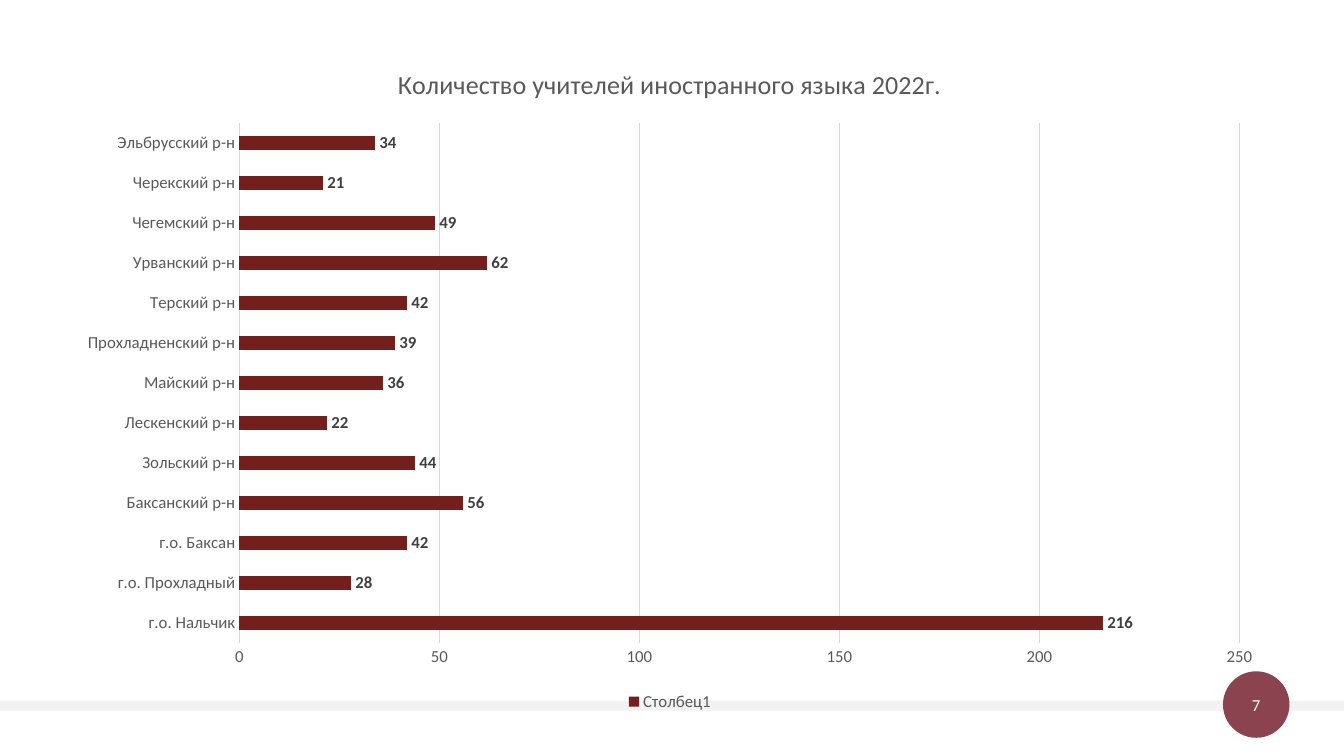
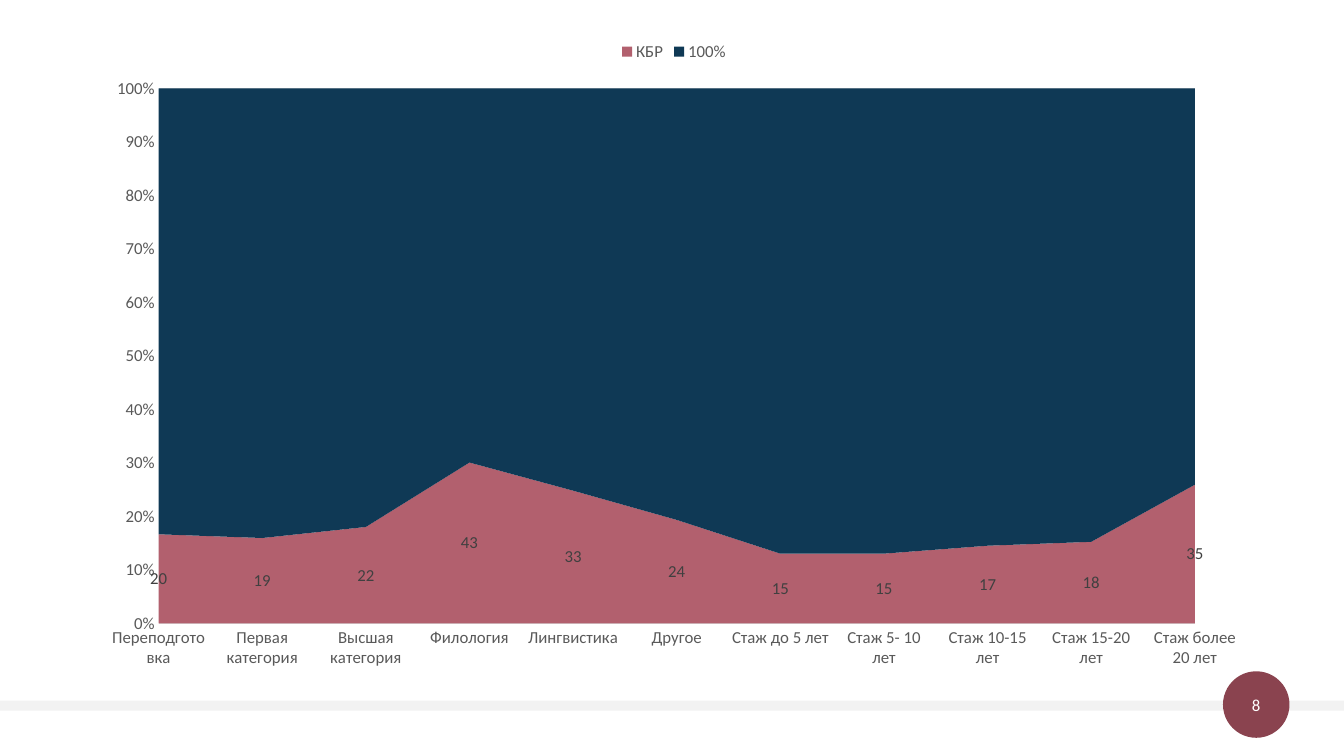
from lxml.etree import SubElement
from pptx import Presentation
from pptx.chart.data import CategoryChartData
from pptx.dml.color import RGBColor
from pptx.enum.chart import (XL_CHART_TYPE, XL_LABEL_POSITION,
                             XL_LEGEND_POSITION, XL_TICK_MARK)
from pptx.enum.shapes import MSO_SHAPE
from pptx.enum.text import MSO_ANCHOR, PP_ALIGN
from pptx.oxml.ns import qn
from pptx.util import Inches, Pt

FONT = "Calibri"
WHITE = RGBColor(0xFF, 0xFF, 0xFF)
BAND_GREY = RGBColor(0xF2, 0xF2, 0xF2)
BADGE_ROSE = RGBColor(0x8A, 0x43, 0x4F)
GRID_GREY = RGBColor(0xD9, 0xD9, 0xD9)
TEXT_GREY = RGBColor(0x59, 0x59, 0x59)
LABEL_GREY = RGBColor(0x40, 0x40, 0x40)
BAR_RED = RGBColor(0x73, 0x1F, 0x1C)
AREA_ROSE = RGBColor(0xB2, 0x60, 0x6E)
AREA_NAVY = RGBColor(0x0F, 0x39, 0x55)

SLIDE_WIDTH, SLIDE_HEIGHT = 13.33, 7.5
BADGE_SIZE = 0.66

TEACHERS = {
    "г.о. Нальчик": 216,
    "г.о. Прохладный": 28,
    "г.о. Баксан": 42,
    "Баксанский р-н": 56,
    "Зольский р-н": 44,
    "Лескенский р-н": 22,
    "Майский р-н": 36,
    "Прохладненский р-н": 39,
    "Терский р-н": 42,
    "Урванский р-н": 62,
    "Чегемский р-н": 49,
    "Черекский р-н": 21,
    "Эльбрусский р-н": 34,
}
QUALIFICATIONS = {
    "Переподготовка": 20,
    "Первая категория": 19,
    "Высшая категория": 22,
    "Филология": 43,
    "Лингвистика": 33,
    "Другое": 24,
    "Стаж до 5 лет": 15,
    "Стаж 5- 10 лет": 15,
    "Стаж 10-15 лет": 17,
    "Стаж 15-20 лет": 18,
    "Стаж более 20 лет": 35,
}


def style_font(font, color, size=12, bold=False):
    font.name = FONT
    font.size = Pt(size)
    font.bold = bold
    font.color.rgb = color


def add_plain_shape(slide, preset, box, color):
    shape = slide.shapes.add_shape(preset, *map(Inches, box))
    shape.shadow.inherit = False
    shape.fill.solid()
    shape.fill.fore_color.rgb = color
    shape.line.fill.background()
    return shape


def add_footer(slide, number):
    """Grey band across the slide with the page number in a round badge."""
    add_plain_shape(slide, MSO_SHAPE.RECTANGLE, (0, 6.95, SLIDE_WIDTH, 0.1), BAND_GREY)
    badge = add_plain_shape(slide, MSO_SHAPE.OVAL,
                            (12.13, 6.66, BADGE_SIZE, BADGE_SIZE), BADGE_ROSE)
    frame = badge.text_frame
    frame.margin_left = frame.margin_right = frame.margin_top = frame.margin_bottom = 0
    frame.vertical_anchor = MSO_ANCHOR.MIDDLE
    frame.text = str(number)
    paragraph = frame.paragraphs[0]
    paragraph.alignment = PP_ALIGN.CENTER
    style_font(paragraph.runs[0].font, WHITE)


def style_axes(chart):
    categories, values = chart.category_axis, chart.value_axis
    for axis in (categories, values):
        axis.major_tick_mark = axis.minor_tick_mark = XL_TICK_MARK.NONE
        style_font(axis.tick_labels.font, TEXT_GREY)
    categories.has_major_gridlines = False
    values.has_major_gridlines = True
    values.format.line.fill.background()
    for line in (categories.format.line, values.major_gridlines.format.line):
        line.color.rgb = GRID_GREY
        line.width = Pt(0.75)


def add_styled_chart(slide, kind, box, categories, series, legend_position):
    """series holds (name, values, colour) for each data row."""
    data = CategoryChartData()
    data.categories = categories
    for name, values, _ in series:
        data.add_series(name, values)
    chart = slide.shapes.add_chart(kind, *map(Inches, box), data).chart
    chart.font.name = FONT
    chart.font.size = Pt(10)
    chart.has_title = False
    chart.has_legend = True
    chart.legend.position = legend_position
    chart.legend.include_in_layout = False
    style_font(chart.legend.font, TEXT_GREY)
    style_axes(chart)
    for plotted, (_, _, color) in zip(chart.plots[0].series, series):
        plotted.format.fill.solid()
        plotted.format.fill.fore_color.rgb = color
    return chart


def show_values(series, bold=False):
    labels = series.data_labels
    labels.show_value = True
    style_font(labels.font, LABEL_GREY, bold=bold)
    return labels


def add_teachers_chart(slide, box):
    chart = add_styled_chart(
        slide, XL_CHART_TYPE.BAR_CLUSTERED, box, list(TEACHERS),
        [("Столбец1", list(TEACHERS.values()), BAR_RED)], XL_LEGEND_POSITION.BOTTOM)
    chart.has_title = True
    title = chart.chart_title.text_frame
    title.text = "Количество учителей иностранного языка 2022г."
    style_font(title.paragraphs[0].runs[0].font, TEXT_GREY, size=18.6)
    plot = chart.plots[0]
    plot.vary_by_categories = False
    plot.gap_width = 182
    show_values(plot.series[0], bold=True).position = XL_LABEL_POSITION.OUTSIDE_END


def add_qualifications_chart(slide, box):
    chart = add_styled_chart(
        slide, XL_CHART_TYPE.AREA_STACKED_100, box, list(QUALIFICATIONS),
        [("КБР", list(QUALIFICATIONS.values()), AREA_ROSE),
         ("100%", [100] * len(QUALIFICATIONS), AREA_NAVY)], XL_LEGEND_POSITION.TOP)
    chart.plots[0].vary_by_categories = False
    show_values(chart.plots[0].series[0])
    percent = chart.value_axis
    percent.major_unit = 0.1
    percent.tick_labels.number_format = "0%"
    percent.tick_labels.number_format_is_linked = False
    # The areas begin right on the value axis.
    axis_xml = chart.value_axis._element
    crossing = axis_xml.find(qn("c:crossBetween"))
    if crossing is None:
        crossing = SubElement(axis_xml, qn("c:crossBetween"))
        axis_xml.find(qn("c:crosses")).addnext(crossing)
    crossing.set("val", "midCat")


def main():
    presentation = Presentation()
    presentation.slide_width = Inches(SLIDE_WIDTH)
    presentation.slide_height = Inches(SLIDE_HEIGHT)
    pages = [
        (7, add_teachers_chart, (0.63, 0.42, 12.03, 6.68)),
        (8, add_qualifications_chart, (0.88, 0.3, 11.61, 6.45)),
    ]
    for number, add_page_chart, box in pages:
        slide = presentation.slides.add_slide(presentation.slide_layouts[6])
        add_footer(slide, number)
        add_page_chart(slide, box)
    presentation.save("out.pptx")


if __name__ == "__main__":
    main()
